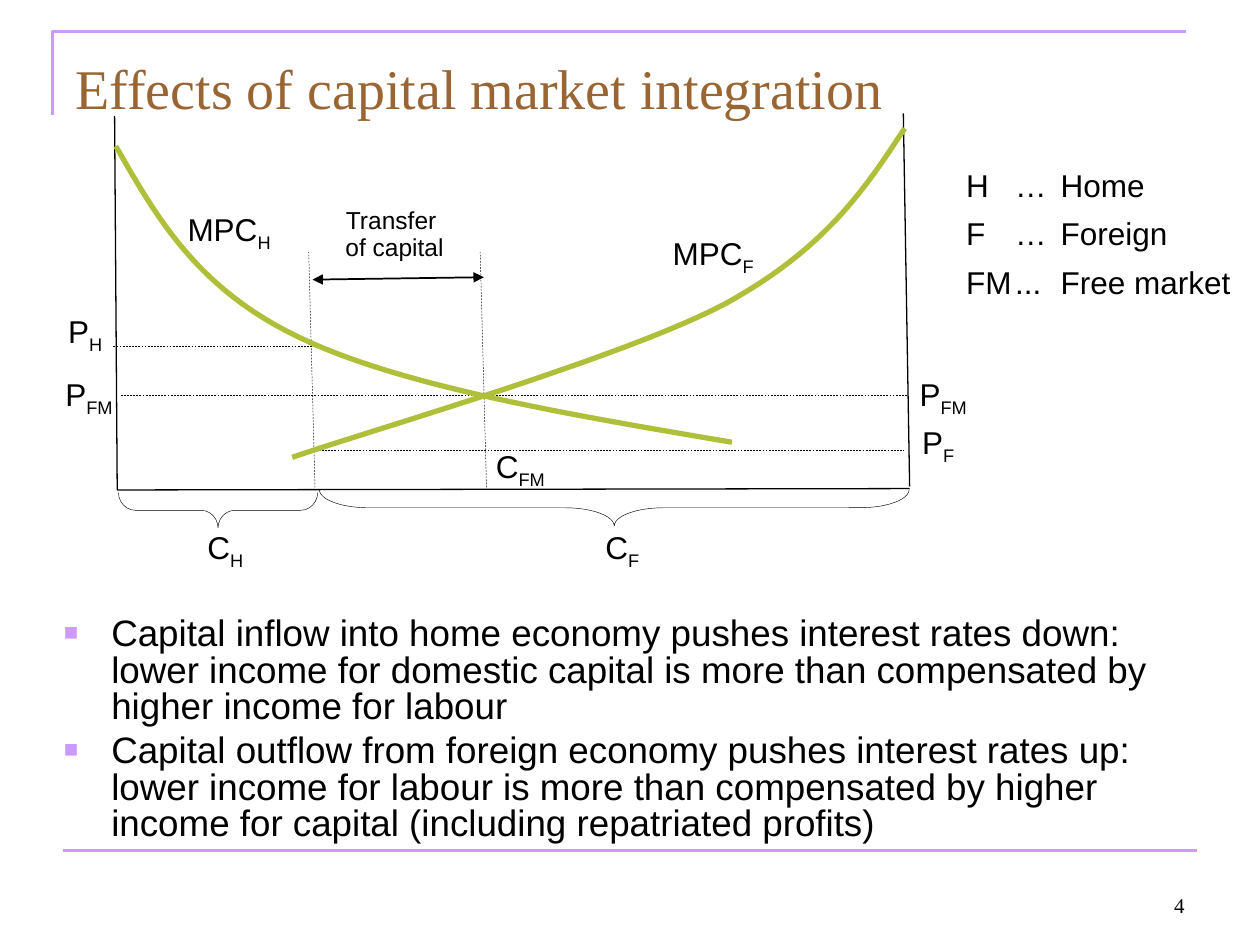
from lxml import etree
from pptx import Presentation
from pptx import util as u
from pptx.dml.color import RGBColor
from pptx.enum import dml, shapes, text
from pptx.oxml import ns

Pt = u.Pt
BLACK = RGBColor(0, 0, 0)
LILAC = RGBColor(0xCC, 0x99, 0xFF)
BROWN = RGBColor(0x99, 0x66, 0x33)
GREEN = RGBColor(0xAF, 0xBF, 0x39)
LEFT, MID, RIGHT = text.PP_ALIGN.LEFT, text.PP_ALIGN.CENTER, text.PP_ALIGN.RIGHT
TOP, BASE = text.MSO_ANCHOR.TOP, text.MSO_ANCHOR.BOTTOM
MIDDLE = text.MSO_ANCHOR.MIDDLE


def add(parent, tag, **attrs):
    node = etree.SubElement(parent, ns.qn(tag))
    for key, val in attrs.items():
        node.set(key, str(val))
    return node


def bullet(para):
    props = para._p.get_or_add_pPr()
    props.set("marL", str(Pt(27)))
    props.set("indent", str(-Pt(27)))
    add(add(props, "a:buClr"), "a:srgbClr", val=LILAC)
    add(props, "a:buSzPct", val=65000)
    add(props, "a:buFont", typeface="Arial")
    add(props, "a:buChar", char="■")


def tabs(para, stops):
    row = add(para._p.get_or_add_pPr(), "a:tabLst")
    for stop in stops:
        add(row, "a:tab", pos=Pt(stop), algn="l")


def write(slide, box, lines, size=18, font="Arial", color=BLACK, align=LEFT,
          anchor=TOP, gap=0, lead=None, marks=False, stops=()):
    """Each line is a string, or a (base, subscript) pair."""
    frame = slide.shapes.add_textbox(*map(Pt, box)).text_frame
    frame.word_wrap = True
    frame.vertical_anchor = anchor
    for i, line in enumerate(lines):
        para = frame.add_paragraph() if i else frame.paragraphs[0]
        para.alignment = align
        para.space_before = Pt(gap)
        if lead:
            para.line_spacing = lead
        if marks:
            bullet(para)
        if stops:
            tabs(para, stops)
        parts = (line,) if isinstance(line, str) else line
        for n, part in enumerate(parts):
            run = para.add_run()
            run.text = part
            run.font.size = Pt(size)
            run.font.name = font
            run.font.color.rgb = color
            if n:
                run._r.get_or_add_rPr().set("baseline", "-25000")


def line(slide, x1, y1, x2, y2, color=BLACK, width=0.75, dash=False, arrows=False):
    item = slide.shapes.add_connector(
        shapes.MSO_CONNECTOR.STRAIGHT, Pt(x1), Pt(y1), Pt(x2), Pt(y2))
    item.line.color.rgb = color
    item.line.width = Pt(width)
    if dash:
        item.line.dash_style = dml.MSO_LINE.DASH
    if arrows:
        for tag in ("a:headEnd", "a:tailEnd"):
            add(item.line._get_or_add_ln(), tag, type="triangle")
    add(item._element.spPr, "a:effectLst")


def outline(item, color, width):
    item.shadow.inherit = False
    item.fill.background()
    item.line.color.rgb = color
    item.line.width = Pt(width)


def trace(slide, pts, color, width):
    pts = [(Pt(x), Pt(y)) for x, y in pts]
    pen = slide.shapes.build_freeform(*pts[0])
    pen.add_line_segments(pts[1:], close=False)
    outline(pen.convert_to_shape(), color, width)


def curve(knots, steps=24):
    """Points along a chain of cubic Bezier arcs."""
    pts = [knots[0]]
    for i in range(0, len(knots) - 1, 3):
        for k in range(1, steps + 1):
            t = k / steps
            s = 1 - t
            mix = (s ** 3, 3 * s * s * t, 3 * s * t * t, t ** 3)
            pts.append(tuple(sum(m * p[d] for m, p in zip(mix, knots[i:i + 4]))
                             for d in (0, 1)))
    return pts


def brace(slide, x, y, width, depth, bend):
    """Brace opening upward, with its left top corner at x, y."""
    item = slide.shapes.add_shape(
        shapes.MSO_SHAPE.LEFT_BRACE, Pt(x + (width - depth) / 2),
        Pt(y + (depth - width) / 2), Pt(depth), Pt(width))
    item.rotation = 270
    item.adjustments[0] = bend
    outline(item, BLACK, 0.25)


def main():
    deck = Presentation()
    deck.slide_width, deck.slide_height = Pt(720), Pt(540)
    slide = deck.slides.add_slide(deck.slide_layouts[6])

    # Frame, title and page number
    trace(slide, [(30, 66), (30, 18), (678, 18)], LILAC, 1.5)
    line(slide, 36, 486, 684, 486, LILAC, 1.5)
    write(slide, (516, 492, 168, 36), ["4"], size=12, font="Times New Roman",
          align=RIGHT, anchor=BASE)
    write(slide, (36, 21.6, 648, 56), ["Effects of capital market integration"],
          size=32, font="Times New Roman", color=BROWN, anchor=MIDDLE)

    # Conclusions
    write(slide, (29.5, 349.2, 648, 149), [
        "Capital inflow into home economy pushes interest rates down: lower income "
        "for domestic capital is more than compensated by higher income for labour",
        "Capital outflow from foreign economy pushes interest rates up: lower income "
        "for labour is more than compensated by higher income for capital "
        "(including repatriated profits)",
    ], size=21, gap=4.2, lead=0.83, marks=True)

    # Axes
    line(slide, 65.5, 66.2, 67, 280)
    line(slide, 67, 280, 519.8, 279.2)
    line(slide, 516.2, 64.8, 519.8, 278)

    # Guides for prices and capital stocks
    for x1, x2, y in ((64.8, 181.4, 198), (69, 518.4, 226.1), (182.2, 516.2, 257)):
        line(slide, x1, y, x2, y, width=0.25, dash=True)
    for x in (180, 278):
        line(slide, x, 278.6, x - 3.6, 144, width=0.25, dash=True)

    # Marginal product curves
    home = [(66.2, 83.5), (89.3, 123.8), (112.3, 164.9), (171.4, 193),
            (230.4, 221), (324.7, 236.9), (418.3, 252.7)]
    abroad = [(517, 73.4), (494.6, 107.3), (472.3, 141.8), (414.7, 173.5),
              (356.4, 204.5), (208.1, 247), (167, 261.4)]
    for knots in (home, abroad):
        trace(slide, curve(knots), GREEN, 3)

    # Braces under the base axis
    brace(slide, 67.7, 281.5, 113.8, 20.2, 0.48)
    brace(slide, 182.5, 279.7, 337, 20.9, 1.35)

    # Labels with subscripts
    for x, y, width, base, sub, align in (
            (25.2, 175, 47, "P", "H", MID),
            (27.4, 211, 47, "P", "FM", MID),
            (515.5, 211, 47, "P", "FM", MID),
            (512.6, 238.3, 47, "P", "F", MID),
            (98.6, 298, 60.5, "C", "H", MID),
            (325.4, 298, 60.5, "C", "F", MID),
            (267.1, 252, 60.5, "C", "FM", MID),
            (100.1, 116.6, 77, "MPC", "H", LEFT),
            (377.3, 130.3, 77, "MPC", "F", LEFT)):
        write(slide, (x, y, width, 28.8), [(base, sub)], align=align)

    # Transfer
    line(slide, 178.6, 159.8, 276.5, 158.4, width=1, arrows=True)
    write(slide, (170, 121, 111, 34), ["Transfer ", "of capital"], size=14,
          align=MID, gap=7, lead=0.5)

    # Legend
    write(slide, (545, 91.4, 170, 85),
          ["H\t…\tHome", "F\t…\tForeign", "FM\t...\tFree market"],
          gap=6, stops=(28, 54))

    deck.save("out.pptx")


if __name__ == "__main__":
    main()
